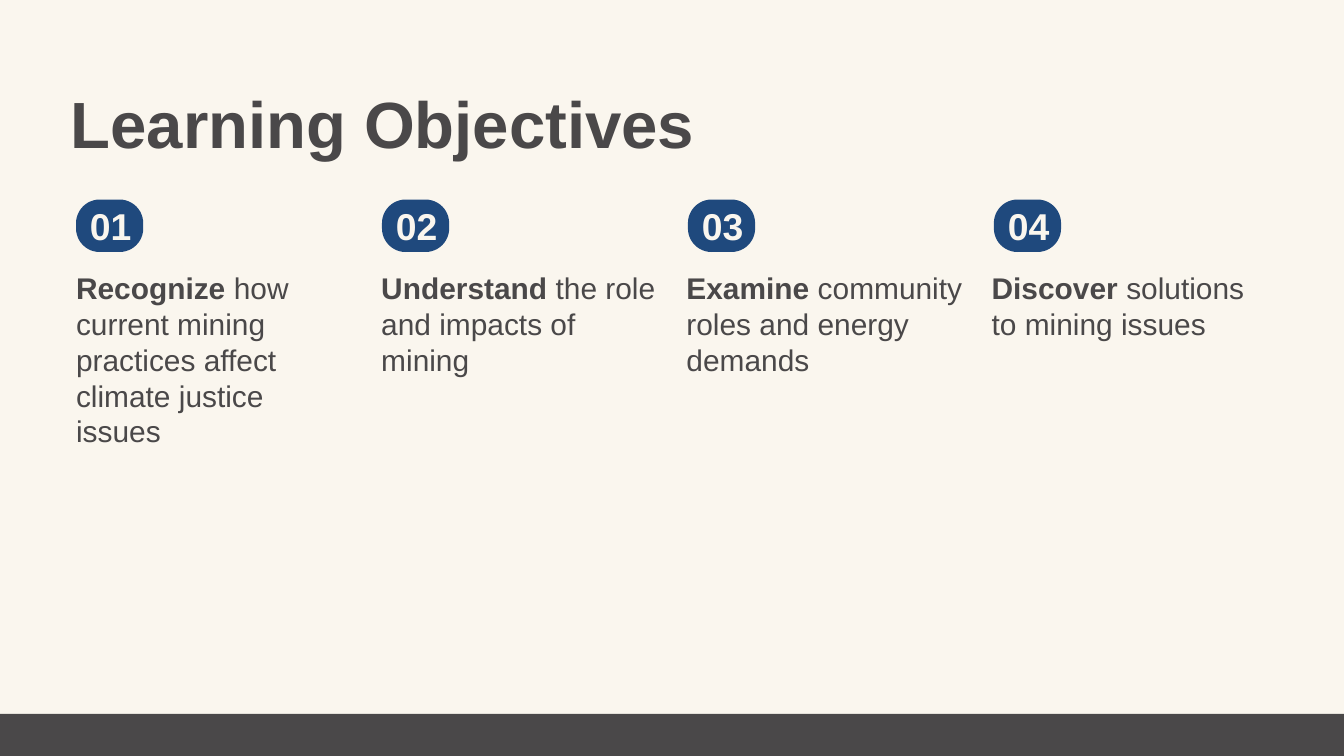
"""Build the Learning Objectives slide with four numbered columns."""
from dataclasses import dataclass

from pptx import Presentation
from pptx.dml.color import RGBColor
from pptx.enum.shapes import MSO_SHAPE
from pptx.enum.text import MSO_ANCHOR, MSO_AUTO_SIZE, PP_ALIGN
from pptx.util import Pt

ROUNDED = MSO_SHAPE.ROUNDED_RECTANGLE
RECTANGLE = MSO_SHAPE.RECTANGLE
TOP = MSO_ANCHOR.TOP
GROW = MSO_AUTO_SIZE.SHAPE_TO_FIT_TEXT
LEFT = PP_ALIGN.LEFT

COLORS = {"cream": "FAF6EE", "charcoal": "4A4849", "navy": "1F497D"}
FONT = "Arial"
LINE_FACTOR = 1.2
FIRST_LEFT = 81.5
BADGE_PITCH = 327.8
TEXT_PITCH = 327


@dataclass
class Area:
    left: float
    top: float
    width: float
    height: float

    def lengths(self) -> tuple:
        return Pt(self.left), Pt(self.top), Pt(self.width), Pt(self.height)


@dataclass
class Span:
    text: str
    bold: bool = True


@dataclass
class Objective:
    verb: str
    rest: str
    lines: int


OBJECTIVES = [
    Objective("Recognize", " how current mining practices affect climate justice issues", 5),
    Objective("Understand", " the role and impacts of mining", 3),
    Objective("Examine", " community roles and energy demands", 3),
    Objective("Discover", " solutions to mining issues", 2),
]


def color(name: str) -> RGBColor:
    return RGBColor.from_string(COLORS[name])


def write(box, area: Area, spans: list[Span], size: float, ink: str) -> None:
    box.left, box.top, box.width, box.height = area.lengths()
    frame = box.text_frame
    frame_format = {
        "margin_left": 0, "margin_top": 0, "margin_right": 0, "margin_bottom": 0,
        "word_wrap": True, "vertical_anchor": TOP, "auto_size": GROW,
    }
    for name, value in frame_format.items():
        setattr(frame, name, value)
    para = frame.paragraphs[0]
    para.alignment = LEFT
    para.line_spacing = Pt(size * LINE_FACTOR)
    for span in spans:
        run = para.add_run()
        run.text = span.text
        for name, value in {"name": FONT, "size": Pt(size), "bold": span.bold}.items():
            setattr(run.font, name, value)
        run.font.color.rgb = color(ink)


def add_text(page, area: Area, spans: list[Span], size: float, ink: str) -> None:
    write(page.shapes.add_textbox(*area.lengths()), area, spans, size, ink)


def add_block(page, kind, area: Area, fill: str):
    block = page.shapes.add_shape(kind, *area.lengths())
    block.shadow.inherit = False
    block.fill.solid()
    block.fill.fore_color.rgb = color(fill)
    block.line.fill.background()
    return block


def add_objective(page, index: int, objective: Objective) -> None:
    badge_left = FIRST_LEFT + index * BADGE_PITCH
    badge = add_block(page, ROUNDED, Area(badge_left, 213.8, 72, 56.2), "navy")
    badge.adjustments[0] = 0.45
    add_text(page, Area(badge_left + 14.9, 217.5, 244, 48),
             [Span(f"{index + 1:02}")], 40, "cream")
    add_text(page, Area(FIRST_LEFT + index * TEXT_PITCH, 289, 297.4, objective.lines * 38.4),
             [Span(objective.verb), Span(objective.rest, False)], 32, "charcoal")


def main() -> None:
    deck = Presentation()
    deck.slide_width, deck.slide_height = Pt(1440), Pt(810)
    page = deck.slides.add_slide(deck.slide_layouts[5])
    page.background.fill.solid()
    page.background.fill.fore_color.rgb = color("cream")
    write(page.shapes.title, Area(75.6, 89.3, 1283, 85),
          [Span("Learning Objectives")], 70, "charcoal")
    add_block(page, RECTANGLE, Area(-27.4, 765, 1565.3, 45), "charcoal")
    for index, objective in enumerate(OBJECTIVES):
        add_objective(page, index, objective)
    deck.save("out.pptx")


if __name__ == "__main__":
    main()
